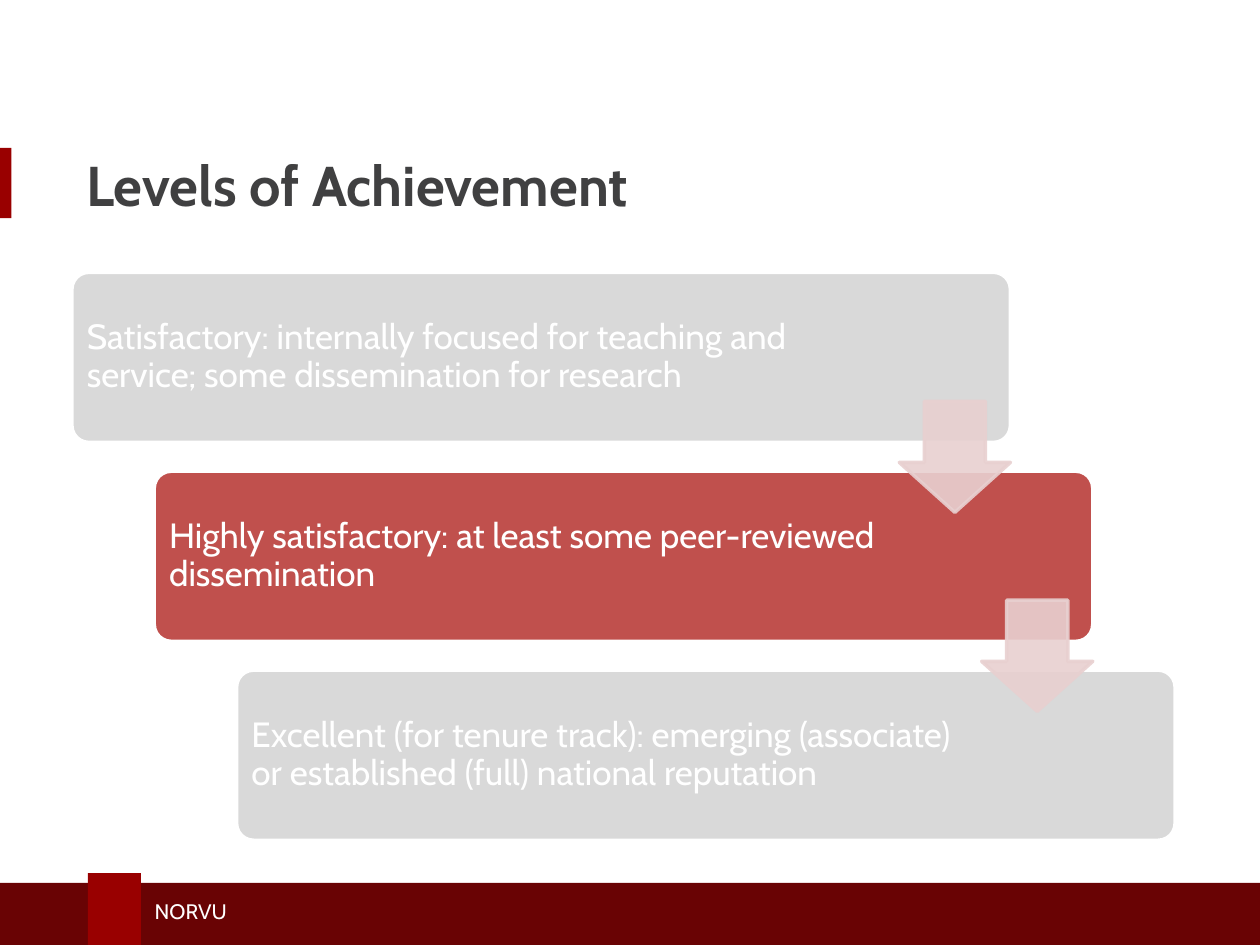
from lxml.etree import SubElement
from pptx import Presentation
from pptx.dml.color import RGBColor
from pptx.enum.shapes import MSO_SHAPE as Shape
from pptx.enum.text import MSO_ANCHOR as Anchor, PP_ALIGN as Align
from pptx.oxml.ns import qn
from pptx.util import Cm, Pt

WHITE = RGBColor(0xFF, 0xFF, 0xFF)
CHARCOAL = RGBColor(0x40, 0x40, 0x41)
CRIMSON = RGBColor(0x99, 0x00, 0x00)
MAROON = RGBColor(0x69, 0x03, 0x04)
GREY = RGBColor(0xD9, 0xD9, 0xD9)
RED = RGBColor(0xC0, 0x50, 0x4D)
PINK = RGBColor(0xE8, 0xD0, 0xD0)

TITLE_FONT = {"name": "Cabin", "size": Pt(32), "bold": True}
LEVEL_FONT = {"name": "Cabin", "size": Pt(20)}
FOOTER_FONT = {"name": "Cabin", "size": Pt(12)}

LEVELS = [
    ("Satisfactory: internally focused for teaching and service; "
     "some dissemination for research", GREY, 15.21),
    ("Highly satisfactory: at least some peer-reviewed dissemination", RED, 14.83),
    ("Excellent (for tenure track): emerging (associate) or established (full) "
     "national reputation", GREY, 14.83),
]


def set_attributes(target, values):
    for name, value in values.items():
        setattr(target, name, value)


def write_text(frame, text, font, color, inset=None, spacing=None):
    set_attributes(frame, {"word_wrap": True, "vertical_anchor": Anchor.MIDDLE})
    if inset is not None:
        sides = ("left", "top", "right", "bottom")
        set_attributes(frame, {f"margin_{side}": Cm(inset) for side in sides})
    para = frame.paragraphs[0]
    set_attributes(para, {"alignment": Align.LEFT, "line_spacing": spacing})
    span = para.add_run()
    span.text = text
    set_attributes(span.font, font)
    span.font.color.rgb = color


def add_block(page, kind, box, fill, line=None, adjustments=()):
    block = page.shapes.add_shape(kind, *map(Cm, box))
    block.shadow.inherit = False
    block.fill.solid()
    block.fill.fore_color.rgb = fill
    if line is None:
        block.line.fill.background()
    else:
        block.line.color.rgb = line
        block.line.width = Pt(2)
    for index, value in enumerate(adjustments):
        block.adjustments[index] = value
    return block


def set_opacity(block, percent):
    for color in block._element.spPr.iter(qn("a:srgbClr")):
        SubElement(color, qn("a:alpha"), val=str(percent * 1000))


def add_heading(page, left, top, width, height):
    add_block(page, Shape.RECTANGLE, (0, top + 0.15, 0.23, 1.42), CRIMSON)
    title = page.shapes.title
    box = {"left": left, "top": top, "width": width, "height": height}
    set_attributes(title, {name: Cm(value) for name, value in box.items()})
    write_text(title.text_frame, "Levels of Achievement", TITLE_FONT, CHARCOAL)


def add_footer(page, left, top, width, height):
    add_block(page, Shape.RECTANGLE, (left, top, width, height), MAROON)
    add_block(page, Shape.RECTANGLE, (left + 1.77, top - 0.2, 1.07, height + 0.2), CRIMSON)
    label = page.shapes.add_textbox(Cm(left + 2.87), Cm(top + 0.19), Cm(10.03), Cm(0.77))
    write_text(label.text_frame, "NORVU", FOOTER_FONT, WHITE)


def add_staircase(page, left, top, width, height):
    step_width, step_height, arrow_size = 18.92, 3.43, 2.24
    gaps = len(LEVELS) - 1
    shift = (width - step_width) / gaps
    drop = (height - step_height) / gaps
    corners = [(left + i * shift, top + i * drop) for i in range(len(LEVELS))]

    for (x, y), (text, fill, text_width) in zip(corners, LEVELS):
        add_block(page, Shape.ROUNDED_RECTANGLE, (x, y, step_width, step_height),
                  fill, WHITE, [0.1])
        label = page.shapes.add_textbox(
            Cm(x + 0.1), Cm(y + 0.1), Cm(text_width), Cm(step_height - 0.2))
        write_text(label.text_frame, text, LEVEL_FONT, WHITE, inset=0.2, spacing=0.9)

    for x, y in corners[:-1]:
        box = (x + step_width - arrow_size, y + 2.6, arrow_size, arrow_size)
        arrow = add_block(page, Shape.DOWN_ARROW, box, PINK, PINK)
        arrow.adjustments[0] = 0.55
        arrow.adjustments[1] = 0.45
        set_opacity(arrow, 90)


def main():
    deck = Presentation()
    deck.slide_width, deck.slide_height = Cm(25.4), Cm(19.05)
    page = deck.slides.add_slide(deck.slide_layouts[5])
    add_footer(page, 0, 17.8, 25.4, 1.25)
    add_heading(page, 1.48, 2.83, 22.23, 1.78)
    add_staircase(page, 1.45, 5.49, 22.24, 11.45)
    deck.save("out.pptx")


if __name__ == "__main__":
    main()
